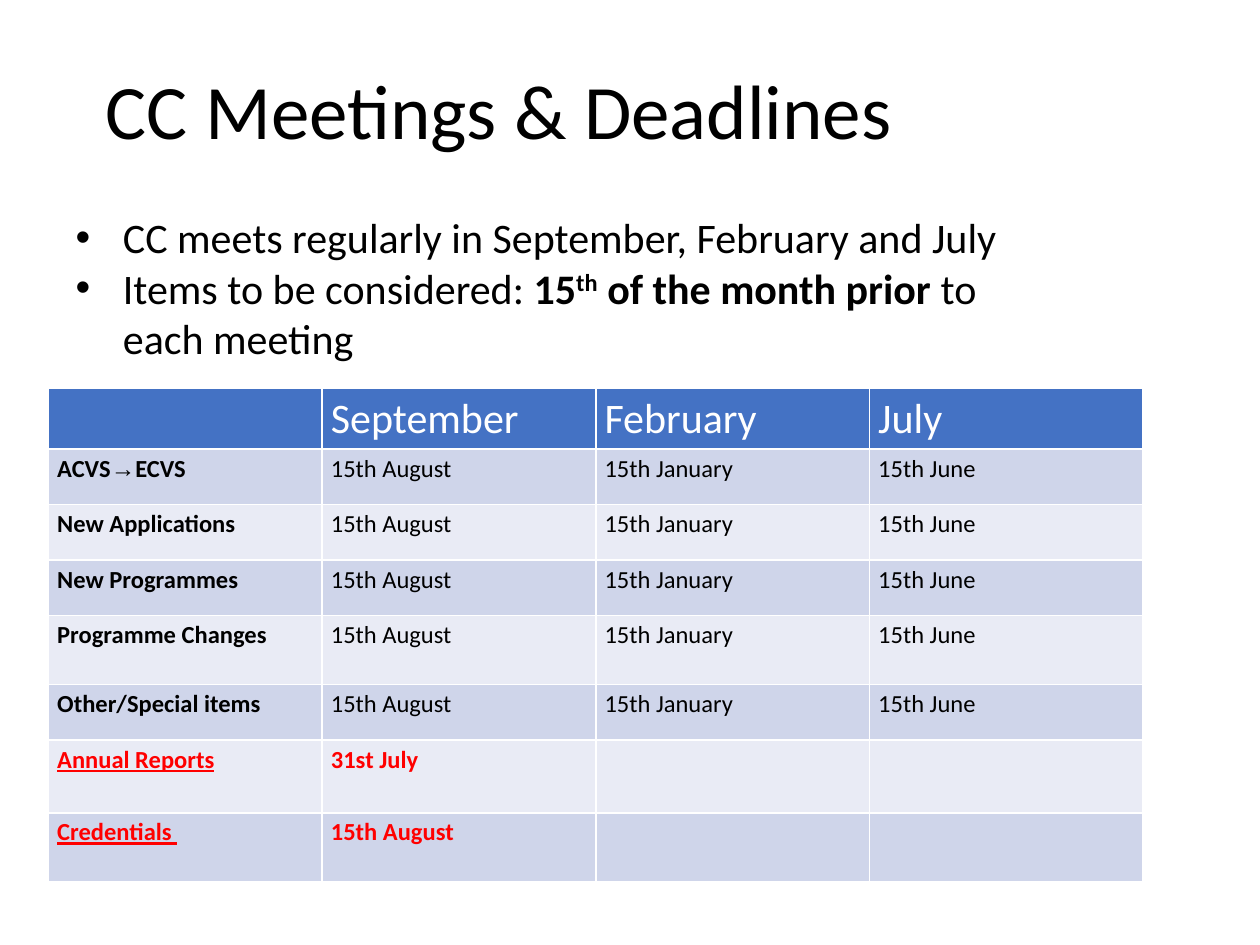
from dataclasses import dataclass

from pptx import Presentation
from pptx.dml.color import RGBColor
from pptx.enum import text
from pptx.util import Pt


@dataclass(frozen=True)
class Theme:
    font: str = "Calibri"
    arrow_font: str = "Arial"
    ink: str = "000000"
    light: str = "FFFFFF"
    alert: str = "FF0000"
    header: str = "4472C4"
    bands: tuple = ("CFD5EA", "E9EBF5")
    title_size: int = 44
    body_size: int = 24
    cell_size: int = 14


theme = Theme()


def add_run(paragraph, words, size, color=theme.ink, bold=False, underline=False, font=theme.font):
    run = paragraph.add_run()
    run.text = words
    run.font.name = font
    run.font.size = Pt(size)
    run.font.bold = bold
    run.font.underline = underline
    run.font.color.rgb = RGBColor.from_string(color)
    return run


def place(shape, left, top, width, height):
    shape.left, shape.top, shape.width, shape.height = map(Pt, (left, top, width, height))


deck = Presentation()
deck.slide_width, deck.slide_height = Pt(720), Pt(540)
slide = deck.slides.add_slide(deck.slide_layouts[1])

# Title
title = slide.shapes.title
place(title, 53.3, 13, 620.6, 104.4)
title.text_frame.vertical_anchor = text.MSO_ANCHOR.MIDDLE
heading = title.text_frame.paragraphs[0]
heading.alignment = text.PP_ALIGN.LEFT
heading.line_spacing = 0.9
add_run(heading, "CC Meetings & Deadlines", theme.title_size)

# Meeting rules: (words, bold, superscript) per run
rules = [
    [("CC meets regularly in September, February and July", False, False)],
    [("Items to be considered: ", False, False), ("15", True, False), ("th", True, True),
     (" of the month prior ", True, False), ("to each meeting", False, False)],
]
body = slide.placeholders[1]
place(body, 36, 117.4, 566.6, 94.3)
body.text_frame.auto_size = text.MSO_AUTO_SIZE.NONE
for index, rule in enumerate(rules):
    bullet = body.text_frame.paragraphs[0] if index == 0 else body.text_frame.add_paragraph()
    bullet.space_before = Pt(0)
    for words, bold, superscript in rule:
        run = add_run(bullet, words, theme.body_size, bold=bold)
        if superscript:
            run.font._element.set("baseline", "30000")

# Deadlines: the regular items share the same dates
meetings = ["", "September", "February", "July"]
regular_dates = ["15th August", "15th January", "15th June"]
regular_items = ["ACVS→ECVS", "New Applications", "New Programmes",
                 "Programme Changes", "Other/Special items"]
yearly_items = [["Annual Reports", "31st July", "", ""],
                ["Credentials ", "15th August", "", ""]]
rows = [meetings] + [[item] + regular_dates for item in regular_items] + yearly_items
row_heights = [33.9, 31.7, 31.7, 31.7, 39.5, 31.7, 41.5, 39.5]
column_width = 156.4

deadlines = slide.shapes.add_table(
    len(rows), len(meetings), Pt(27.7), Pt(222),
    Pt(column_width * len(meetings)), Pt(sum(row_heights))).table
for column in deadlines.columns:
    column.width = Pt(column_width)

for r, (entries, height) in enumerate(zip(rows, row_heights)):
    deadlines.rows[r].height = Pt(height)
    is_header, is_yearly = r == 0, entries in yearly_items
    fill = theme.header if is_header else theme.bands[(r - 1) % 2]
    color = theme.light if is_header else theme.alert if is_yearly else theme.ink
    size = theme.body_size if is_header else theme.cell_size
    for c, entry in enumerate(entries):
        cell = deadlines.cell(r, c)
        cell.fill.solid()
        cell.fill.fore_color.rgb = RGBColor.from_string(fill)
        cell.margin_left = cell.margin_right = Pt(5)
        cell.margin_top = cell.margin_bottom = Pt(2.7)
        is_item = c == 0
        before, arrow, after = entry.partition("→")
        for words, font in ((before, theme.font), (arrow, theme.arrow_font), (after, theme.font)):
            if words:
                add_run(cell.text_frame.paragraphs[0], words, size, color,
                        bold=not is_header and (is_item or is_yearly),
                        underline=is_item and is_yearly, font=font)

deck.save("out.pptx")
